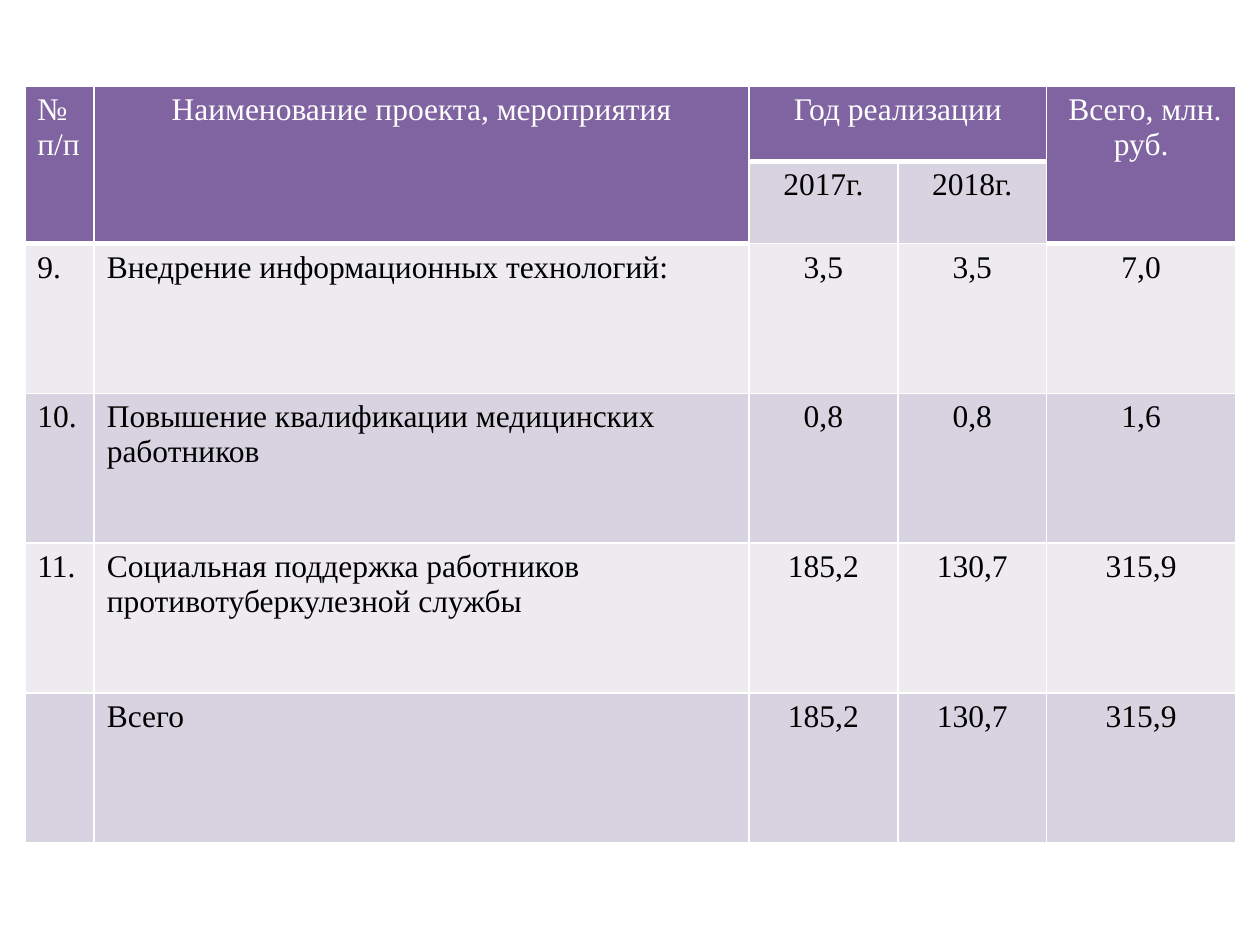
import dataclasses

import lxml.etree
import pptx
import pptx.dml.color
import pptx.enum.text
import pptx.oxml.ns
import pptx.util

Cm, Pt = pptx.util.Cm, pptx.util.Pt
RGB = pptx.dml.color.RGBColor.from_string
ALIGN = pptx.enum.text.PP_ALIGN
qn = pptx.oxml.ns.qn


@dataclasses.dataclass(frozen=True)
class Theme:
    font: str = "Times New Roman"
    size: int = 18
    text: str = "000000"
    header_text: str = "FFFFFF"
    header_fill: str = "8064A2"
    bands: tuple = ("EDEAF0", "D8D3E0")
    border: str = "FFFFFF"
    border_width: int = 1
    header_border_width: int = 3


HEADER_ROWS = [
    ["№\nп/п", "Наименование проекта, мероприятия", "Год реализации", "", " Всего, млн. руб."],
    ["", "", "2017г.", "2018г.", ""],
]
PROJECT_ROWS = [
    ["9.", "Внедрение информационных технологий:", "3,5", "3,5", "7,0"],
    ["10.", "Повышение квалификации медицинских работников", "0,8", "0,8", "1,6"],
    ["11.", "Социальная поддержка работников противотуберкулезной службы",
     "185,2", "130,7", "315,9"],
    ["", "Всего", "185,2", "130,7", "315,9"],
]
HEADER_MERGES = [((0, 0), (1, 0)), ((0, 1), (1, 1)), ((0, 2), (0, 3)), ((0, 4), (1, 4))]
COLUMN_WIDTHS = [1.4, 13.2, 3, 3, 3.81]
ROW_HEIGHTS = [1.52, 1.19] + [3.02] * len(PROJECT_ROWS)


class SlideBuilder:
    def __init__(self, slide, theme):
        self.slide = slide
        self.theme = theme

    def table(self, left, top, widths, heights, rows, merges):
        frame = self.slide.shapes.add_table(
            len(heights), len(widths), Cm(left), Cm(top), Cm(sum(widths)), Cm(sum(heights)))
        table = frame.table
        for column, width in zip(table.columns, widths):
            column.width = Cm(width)
        for row, height in zip(table.rows, heights):
            row.height = Cm(height)
        for first, last in merges:
            table.cell(*first).merge(table.cell(*last))
        for r, values in enumerate(rows):
            for c, value in enumerate(values):
                cell = table.cell(r, c)
                is_header = r == 0 or cell.is_spanned
                self.cell_fill(cell, r, is_header)
                self.cell_borders(cell, r == 0)
                if not cell.is_spanned:
                    centred = c > 1 or (r == 0 and c == 1)
                    self.cell_text(cell, value, centred, is_header)

    def cell_fill(self, cell, row, is_header):
        cell.fill.solid()
        band = self.theme.bands[row % 2]
        cell.fill.fore_color.rgb = RGB(self.theme.header_fill if is_header else band)

    def cell_text(self, cell, text, centred, is_header):
        cell.text = text
        colour = self.theme.header_text if is_header else self.theme.text
        font_format = {"name": self.theme.font, "size": Pt(self.theme.size), "bold": False}
        for p in cell.text_frame.paragraphs:
            p.alignment = ALIGN.CENTER if centred else ALIGN.LEFT
            for name, value in font_format.items():
                setattr(p.font, name, value)
            for run in p.runs:
                for name, value in font_format.items():
                    setattr(run.font, name, value)
                run.font.color.rgb = RGB(colour)

    def cell_borders(self, cell, thick_bottom):
        """Put border lines ahead of the fill, as the cell schema requires."""
        properties = cell._tc.get_or_add_tcPr()
        for i, side in enumerate(("L", "R", "T", "B")):
            thick = side == "B" and thick_bottom
            width = self.theme.header_border_width if thick else self.theme.border_width
            line = lxml.etree.Element(qn(f"a:ln{side}"), w=str(Pt(width)))
            fill = lxml.etree.SubElement(line, qn("a:solidFill"))
            lxml.etree.SubElement(fill, qn("a:srgbClr"), val=self.theme.border)
            properties.insert(i, line)


def main():
    prs = pptx.Presentation()
    prs.slide_width, prs.slide_height = Cm(25.4), Cm(19.05)
    blank_layout = prs.slide_layouts[6]
    builder = SlideBuilder(prs.slides.add_slide(blank_layout), Theme())
    builder.table(0.5, 1.73, COLUMN_WIDTHS, ROW_HEIGHTS,
                  HEADER_ROWS + PROJECT_ROWS, HEADER_MERGES)
    prs.save("out.pptx")


if __name__ == "__main__":
    main()
